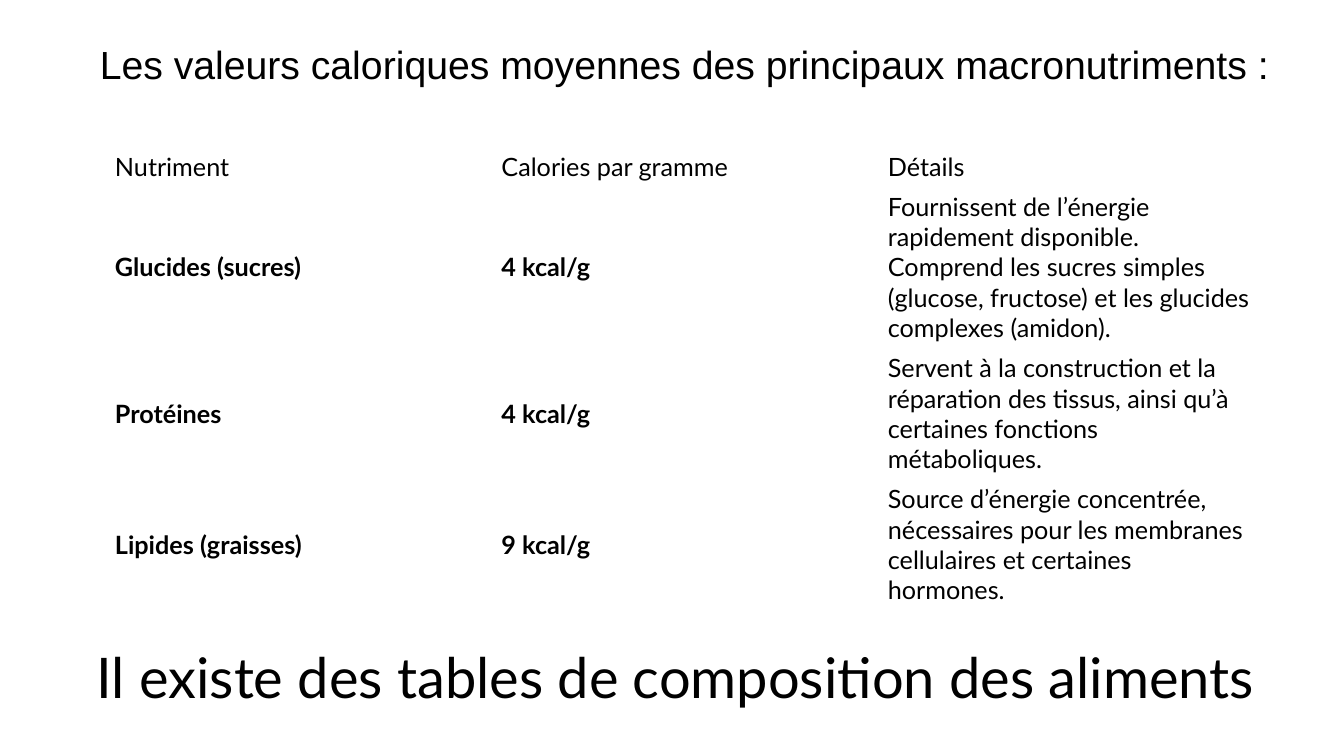
from pptx import Presentation
from pptx.dml.color import RGBColor
from pptx.enum.text import MSO_ANCHOR, PP_ALIGN
from pptx.util import Inches, Pt

BLACK = RGBColor(0, 0, 0)
HEADING_FONT = "Arial"
BODY_FONT = "Lato"

ROW_HEIGHTS = [0.4, 1.6, 1.3, 1.3]
NUTRIENTS = [
    ("Nutriment", "Calories par gramme", "Détails"),
    ("Glucides (sucres)", "4 kcal/g",
     "Fournissent de l’énergie rapidement disponible. Comprend les sucres "
     "simples (glucose, fructose) et les glucides complexes (amidon)."),
    ("Protéines", "4 kcal/g",
     "Servent à la construction et la réparation des tissus, ainsi qu’à "
     "certaines fonctions métaboliques."),
    ("Lipides (graisses)", "9 kcal/g",
     "Source d’énergie concentrée, nécessaires pour les membranes cellulaires "
     "et certaines hormones."),
]


def style_paragraph(p, font, size, bold=False):
    for r in p.runs:
        r.font.name = font
        r.font.size = Pt(size)
        r.font.bold = bold
        r.font.color.rgb = BLACK


def add_text(slide, text, left, top, width, height, font, size):
    sp = slide.shapes.add_textbox(Inches(left), Inches(top), Inches(width), Inches(height))
    tf = sp.text_frame
    tf.word_wrap = True
    tf.text = text
    p = tf.paragraphs[0]
    style_paragraph(p, font, size)
    return p


def add_title(slide, left, top, width, height):
    p = add_text(slide, "Les valeurs caloriques moyennes des principaux macronutriments :",
                 left, top, width, height, HEADING_FONT, 28)
    p.alignment = PP_ALIGN.CENTER
    p.line_spacing = 0.9


def add_nutrient_table(slide, left, top, width, height):
    frame = slide.shapes.add_table(len(NUTRIENTS), len(NUTRIENTS[0]), Inches(left),
                                   Inches(top), Inches(width), Inches(height))
    table = frame.table
    table.first_row = False
    table.horz_banding = False
    for i, texts in enumerate(NUTRIENTS):
        table.rows[i].height = Inches(ROW_HEIGHTS[i])
        for j, text in enumerate(texts):
            cell = table.cell(i, j)
            cell.fill.background()
            cell.vertical_anchor = MSO_ANCHOR.MIDDLE
            cell.text = text
            style_paragraph(cell.text_frame.paragraphs[0], BODY_FONT, 18,
                            bold=i > 0 and j < 2)


def add_closing(slide, left, top, width, height):
    add_text(slide, "Il existe des tables de composition des aliments",
             left, top, width, height, BODY_FONT, 40)


def main():
    prs = Presentation()
    prs.slide_width = Inches(13.33)
    prs.slide_height = Inches(7.5)
    slide = prs.slides.add_slide(prs.slide_layouts[6])
    add_title(slide, 0.4, 0.4, 12.77, 0.95)
    add_nutrient_table(slide, 1.04, 1.45, 11.5, sum(ROW_HEIGHTS))
    add_closing(slide, 0.86, 6.33, 12.01, 0.77)
    prs.save("out.pptx")


if __name__ == "__main__":
    main()
